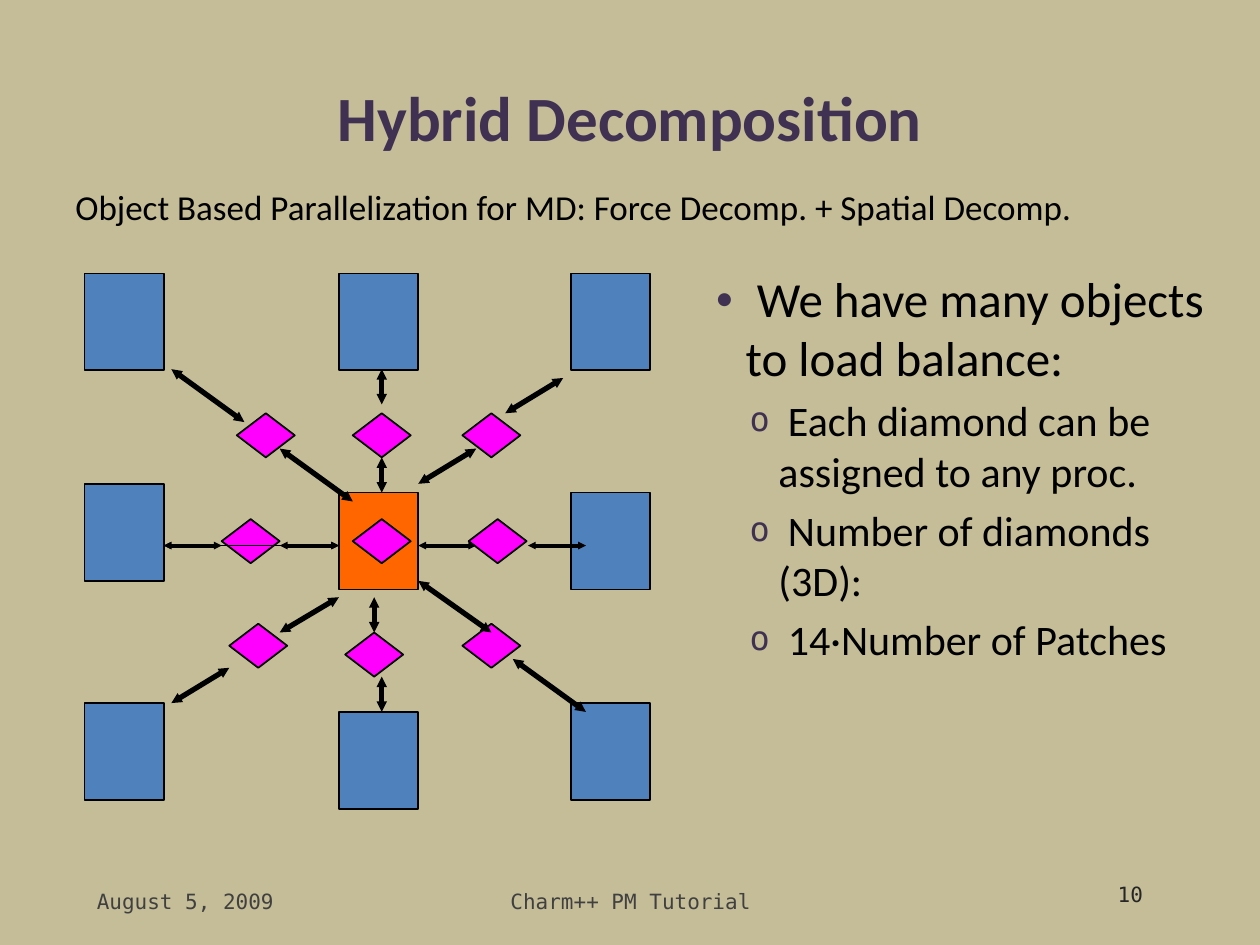
from lxml import etree
from pptx import Presentation
from pptx.dml.color import RGBColor
from pptx.enum.shapes import MSO_CONNECTOR, MSO_SHAPE
from pptx.enum.text import MSO_ANCHOR, PP_ALIGN
from pptx.oxml.ns import qn
from pptx.util import Inches, Pt

RECT, DIAMOND = MSO_SHAPE.RECTANGLE, MSO_SHAPE.DIAMOND
STRAIGHT = MSO_CONNECTOR.STRAIGHT
TOP, MIDDLE = MSO_ANCHOR.TOP, MSO_ANCHOR.MIDDLE
LEFT, CENTER, RIGHT = PP_ALIGN.LEFT, PP_ALIGN.CENTER, PP_ALIGN.RIGHT

COLORS = {
    "background": "C4BD97",
    "title": "403152",
    "footer": "404040",
    "page": "262626",
    "black": "000000",
    "patch": "4F81BD",
    "home_patch": "FF6600",
    "compute": "FF00FF",
}
BODY_FONT, MONO_FONT = "Calibri", "DejaVu Sans Mono"

PATCH_SIZE = (0.63, 0.77)
COMPUTE_SIZE = (0.46, 0.35)
COLUMNS = (0.67, 2.69, 4.53)
PATCH_TOPS = ((2.17, 2.17, 2.17), (3.84, 3.91, 3.91), (5.58, 5.65, 5.58))
COMPUTES = [
    (1.88, 3.28), (2.8, 3.28), (3.67, 3.28),
    (1.76, 4.12), (3.72, 4.12),
    (1.82, 4.95), (2.74, 5.02), (3.67, 4.95),
]
HOME_COMPUTE = (2.8, 4.12)

ROW_Y = 4.33
ROW_ARROWS = [(1.3, 1.76), (3.32, 3.78), (4.19, 4.65), (2.22, 2.69)]
ARROWS = [
    (2.69, 4.74, 2.22, 5.02), (1.82, 5.3, 1.36, 5.58),
    (4.47, 3, 4.01, 3.28), (3.78, 3.56, 3.32, 3.84),
    (3.03, 2.93, 3.03, 3.21), (3.03, 3.63, 3.03, 3.91),
    (2.97, 4.74, 2.97, 5.02), (3.03, 5.37, 3.03, 5.65),
    (1.36, 2.93, 1.94, 3.35), (2.22, 3.56, 2.8, 3.98),
    (4.07, 5.23, 4.65, 5.65), (3.32, 4.61, 3.9, 5.02),
]

# text, size, left margin, hanging indent, bullet, bullet percent, bullet font
POINTS = [
    (" We have many objects to load balance:", 28, 0.24, 0.24, "•", 75, BODY_FONT),
    *[(text, 24, 0.5, 0.23, "o", 80, MONO_FONT) for text in (
        " Each diamond can be assigned to any proc.",
        " Number of diamonds (3D):",
        " 14·Number of Patches",
    )],
]


def rgb(name):
    return RGBColor.from_string(COLORS[name])


def style(font, size, color, face=BODY_FONT, bold=False):
    font.size, font.name, font.bold = Pt(size), face, bold
    font.color.rgb = rgb(color)


def add_frame(slide, box, anchor=TOP):
    frame = slide.shapes.add_textbox(*map(Inches, box)).text_frame
    frame.word_wrap = True
    frame.vertical_anchor = anchor
    return frame


def add_label(slide, box, text, size, color, face=BODY_FONT,
              align=LEFT, anchor=TOP, bold=False):
    paragraph = add_frame(slide, box, anchor).paragraphs[0]
    paragraph.text = text
    paragraph.alignment = align
    style(paragraph.runs[0].font, size, color, face, bold)


def add_block(slide, kind, position, size, color):
    block = slide.shapes.add_shape(kind, *map(Inches, (*position, *size)))
    block.shadow.inherit = False
    block.fill.solid()
    block.fill.fore_color.rgb = rgb(color)
    block.line.color.rgb = rgb("black")
    block.line.width = Pt(1)


def add_double_arrow(slide, ends, width):
    arrow = slide.shapes.add_connector(STRAIGHT, *map(Inches, ends))
    arrow.line.color.rgb = rgb("black")
    arrow.line.width = Pt(width)
    properties = arrow._element.spPr
    line = properties.find(qn("a:ln"))
    for end in ("a:headEnd", "a:tailEnd"):
        etree.SubElement(line, qn(end), type="triangle", w="sm", len="sm")
    etree.SubElement(properties, qn("a:effectLst"))


def set_bullet(paragraph, margin, hanging, char, percent, face):
    properties = paragraph._p.get_or_add_pPr()
    properties.set("marL", str(Inches(margin)))
    properties.set("indent", str(-Inches(hanging)))
    color = etree.SubElement(properties, qn("a:buClr"))
    etree.SubElement(color, qn("a:srgbClr"), val=COLORS["title"])
    etree.SubElement(properties, qn("a:buSzPct"), val=str(percent * 1000))
    etree.SubElement(properties, qn("a:buFont"), typeface=face)
    etree.SubElement(properties, qn("a:buChar"), char=char)


def add_points(slide):
    frame = add_frame(slide, (5.58, 2.08, 4.08, 3.71))
    frame.margin_right = Inches(0.05)
    for index, (text, size, *bullet) in enumerate(POINTS):
        paragraph = frame.add_paragraph() if index else frame.paragraphs[0]
        paragraph.text = text
        set_bullet(paragraph, *bullet)
        if index:
            paragraph.level = 1
            paragraph.space_before = Pt(5)
        style(paragraph.runs[0].font, size, "black")


def add_decomposition(slide):
    """Draw the patches, the compute diamonds and the arrows between them."""
    for row, tops in enumerate(PATCH_TOPS):
        for column, position in enumerate(zip(COLUMNS, tops)):
            color = "home_patch" if row == column == 1 else "patch"
            add_block(slide, RECT, position, PATCH_SIZE, color)
    for position in COMPUTES:
        add_block(slide, DIAMOND, position, COMPUTE_SIZE, "compute")
    for start, end in ROW_ARROWS:
        add_double_arrow(slide, (start, ROW_Y, end, ROW_Y), 2.25)
    for ends in ARROWS:
        add_double_arrow(slide, ends, 3)
    add_double_arrow(slide, (1.3, ROW_Y, 2.69, ROW_Y), 1)
    add_block(slide, DIAMOND, HOME_COMPUTE, COMPUTE_SIZE, "compute")


def main():
    deck = Presentation()
    deck.slide_width, deck.slide_height = Inches(10), Inches(7.5)
    slide = deck.slides.add_slide(deck.slide_layouts[6])
    slide.background.fill.solid()
    slide.background.fill.fore_color.rgb = rgb("background")

    add_label(slide, (0.5, 0.3, 9, 1.25), "Hybrid Decomposition", 36, "title",
              align=CENTER, anchor=MIDDLE, bold=True)
    add_label(slide, (0.67, 6.95, 2.17, 0.4), "August 5, 2009", 12, "footer",
              MONO_FONT, anchor=MIDDLE)
    add_label(slide, (3.42, 6.95, 3.17, 0.4), "Charm++ PM Tutorial", 12, "footer",
              MONO_FONT, CENTER, MIDDLE)
    add_label(slide, (7.17, 6.95, 2, 0.4), "10", 12, "page", MONO_FONT, RIGHT)
    add_decomposition(slide)
    add_label(slide, (0.5, 1.42, 8.83, 0.44),
              "Object Based Parallelization for MD: Force Decomp. + Spatial Decomp.",
              20, "black")
    add_points(slide)
    deck.save("out.pptx")


if __name__ == "__main__":
    main()
